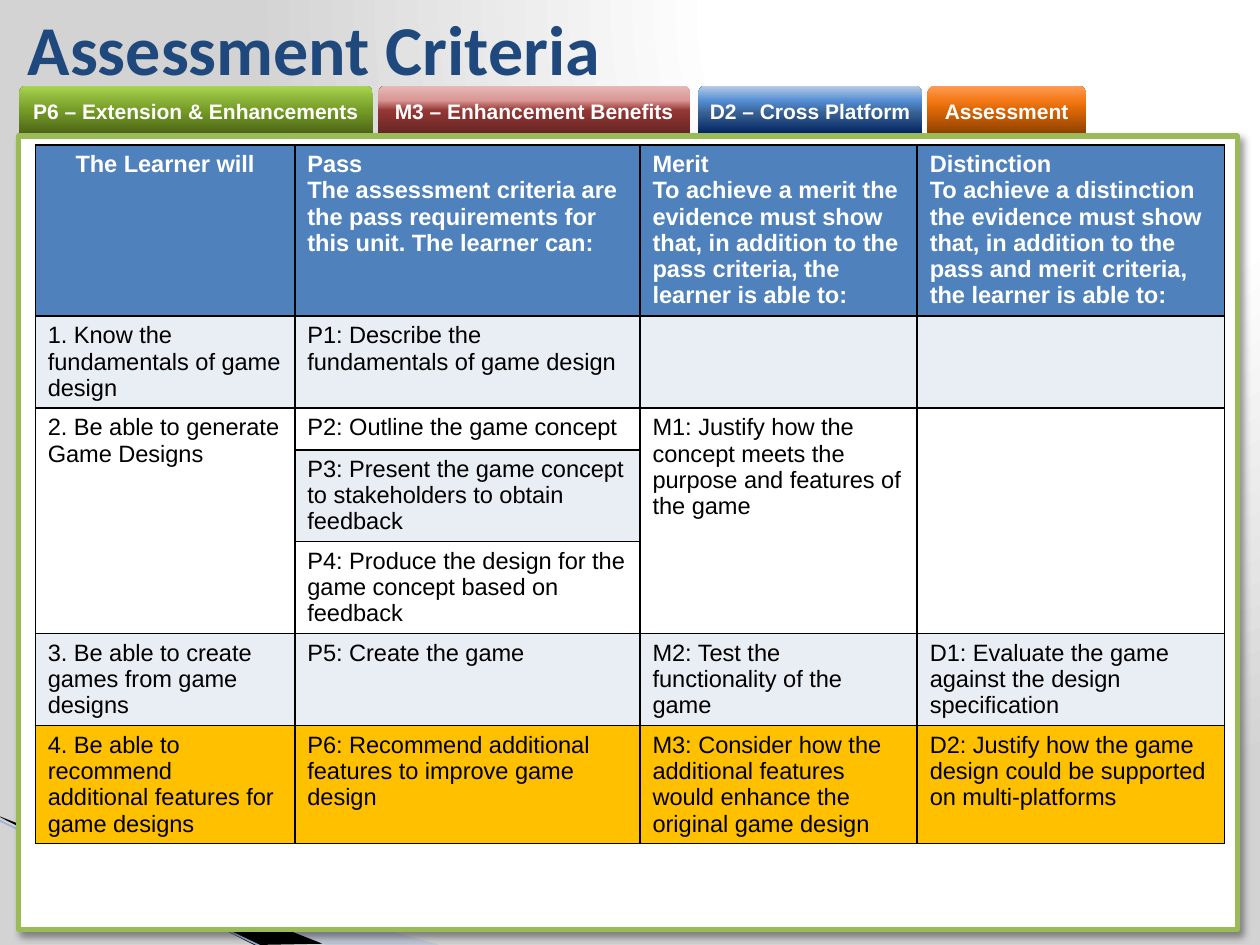
"""Build the assessment criteria slide."""
from lxml.etree import SubElement
from pptx import Presentation
from pptx.dml.color import RGBColor as RGB
from pptx.enum.shapes import MSO_CONNECTOR as Link, MSO_SHAPE as Kind
from pptx.enum.text import MSO_ANCHOR as Anchor, PP_ALIGN as Align
from pptx.oxml import parse_xml
from pptx.oxml.ns import nsdecls, qn
from pptx.util import Inches, Pt

HEX = {
    "white": "FFFFFF", "black": "000000", "navy": "1F497D", "blue": "4F81BD",
    "pale": "E9EDF4", "gold": "FFC000", "green": "9BBB59",
    "mist": "A7B9DB", "steel": "9EB3D6",
}
BACK = [(0, "FFFFFF"), (40, "FFFFFF"), (100, "D3D3D3")]
TABS = [
    ("P6 – Extension & Enhancements", 0.15, 2.81,
     [(0, "4A6316"), (50, "769C27"), (70, "89B137"), (100, "A9D651")]),
    ("M3 – Enhancement Benefits", 3, 2.48,
     [(0, "632523"), (50, "953735"), (70, "D99694"), (100, "E6B9B8")]),
    ("D2 – Cross Platform", 5.54, 1.78,
     [(0, "002060"), (44, "376092"), (70, "558ED5"), (100, "B9CDE5")]),
    ("Assessment", 7.36, 1.26,
     [(0, "8B3F00"), (50, "DA6606"), (70, "F47917"), (100, "FF9C54")]),
]
WEDGES = [
    ("mist", 40, [(-0.01, 6.5), (3.49, 7.5), (2.59, 7.5), (-0.01, 6.49)]),
    ("black", 100, [(0, 6.48), (2.56, 7.49), (2.02, 7.5), (0.01, 6.49)]),
]
COLS = [2.06, 2.74, 2.2, 2.44]
ROWS = [
    (1.36, "blue", [
        ["The Learner will"],
        ["Pass", "The assessment criteria are the pass requirements for this unit. "
         "The learner can:"],
        ["Merit", "To achieve a merit the evidence must show that, in addition to "
         "the pass criteria, the learner is able to:"],
        ["Distinction", "To achieve a distinction the evidence must show that, in "
         "addition to the pass and merit criteria, the learner is able to:"]]),
    (0.73, "pale", [
        ["1. Know the fundamentals of game design"],
        ["P1: Describe the fundamentals of game design"], [], []]),
    (0.33, "white", [
        ["2. Be able to generate Game Designs"],
        ["P2: Outline the game concept"],
        ["M1: Justify how the concept meets the purpose and features of the game"],
        []]),
    (0.73, "pale", [
        [], ["P3: Present the game concept to stakeholders to obtain feedback"],
        [], []]),
    (0.73, "white", [
        [], ["P4: Produce the design for the game concept based on feedback"],
        [], []]),
    (0.73, "pale", [
        ["3. Be able to create games from game designs"],
        ["P5: Create the game"],
        ["M2: Test the functionality of the game"],
        ["D1: Evaluate the game against the design specification"]]),
    (0.93, "gold", [
        ["4. Be able to recommend", "additional features for", "game designs"],
        ["P6: Recommend additional features to improve game design"],
        ["M3: Consider how the additional features would enhance the original "
         "game design"],
        ["D2: Justify how the game design could be supported on multi-platforms"]]),
]
MERGED = [(2, 4, col) for col in (0, 2, 3)]


def color(name):
    return RGB.from_string(HEX[name])


def box(*sizes):
    return [Inches(size) for size in sizes]


def shade(fill, root, stops, path=False):
    fill.gradient()
    grad = root.find(".//" + qn("a:gradFill"))
    grad.clear()
    items = SubElement(grad, qn("a:gsLst"))
    for pos, tint in stops:
        stop = SubElement(items, qn("a:gs"), pos=str(pos * 1000))
        SubElement(stop, qn("a:srgbClr"), val=tint)
    if path:
        way = SubElement(grad, qn("a:path"), path="circle")
        SubElement(way, qn("a:fillToRect"), l="65000", t="0", r="0", b="98000")
    else:
        SubElement(grad, qn("a:lin"), ang="16200000", scaled="0")


def write(frame, lines, font, size, tint, bold=False, align=Align.LEFT):
    for i, line in enumerate(lines):
        para = frame.add_paragraph() if i else frame.paragraphs[0]
        para.alignment = align
        run = para.add_run()
        run.text = line
        run.font.name, run.font.size, run.font.bold = font, Pt(size), bold
        run.font.color.rgb = color(tint)


def add_wedges(slide):
    for tint, alpha, points in WEDGES:
        start, *rest = [box(*point) for point in points]
        pen = slide.shapes.build_freeform(*start, scale=1.0)
        pen.add_line_segments(rest)
        shape = pen.convert_to_shape()
        shape.shadow.inherit = False
        shape.fill.solid()
        shape.fill.fore_color.rgb = color(tint)
        shape.line.fill.background()
        if alpha < 100:
            fill = shape._element.spPr.find(qn("a:solidFill"))
            SubElement(fill[0], qn("a:alpha"), val=str(alpha * 1000))
    edge = slide.shapes.add_connector(Link.STRAIGHT, *box(-0.01, 6.51, 2.09, 7.52))
    edge.line.color.rgb, edge.line.width = color("steel"), Pt(0.95)
    SubElement(edge._element.spPr, qn("a:effectLst"))


def add_tabs(slide):
    for label, left, width, stops in TABS:
        tab = slide.shapes.add_shape(Kind.ROUND_2_SAME_RECTANGLE,
                                     *box(left, 0.68, width, 0.39))
        tab.shadow.inherit = False
        shade(tab.fill, tab._element.spPr, stops)
        tab.line.fill.background()
        frame = tab.text_frame
        frame.margin_left = frame.margin_right = 0
        frame.margin_top = frame.margin_bottom = 0
        frame.vertical_anchor = Anchor.MIDDLE
        write(frame, [label], "Arial", 12, "white", True, Align.CENTER)


def add_panel(slide):
    panel = slide.shapes.add_shape(Kind.RECTANGLE, *box(0.15, 1.08, 9.67, 6.3))
    panel.fill.solid()
    panel.fill.fore_color.rgb = color("white")
    panel.line.color.rgb, panel.line.width = color("green"), Pt(3)
    panel.shadow.inherit = False
    glow = SubElement(panel._element.spPr.find(qn("a:effectLst")), qn("a:outerShdw"),
                      blurRad=str(Pt(4)), dist=str(Pt(3)), dir="2700000", algn="tl")
    tint = SubElement(glow, qn("a:srgbClr"), val=HEX["black"])
    SubElement(tint, qn("a:alpha"), val="40000")


def border(cell):
    props = cell._tc.get_or_add_tcPr()
    for i, side in enumerate("LRTB"):
        props.insert(i, parse_xml(
            f'<a:ln{side} {nsdecls("a")} w="{Pt(1)}"><a:solidFill>'
            f'<a:srgbClr val="{HEX["black"]}"/></a:solidFill></a:ln{side}>'))


def add_grid(slide):
    high = sum(row[0] for row in ROWS)
    grid = slide.shapes.add_table(len(ROWS), len(COLS),
                                  *box(0.28, 1.15, sum(COLS), high)).table
    for col, width in zip(grid.columns, COLS):
        col.width = Inches(width)
    for r, (height, back, texts) in enumerate(ROWS):
        grid.rows[r].height = Inches(height)
        for c, lines in enumerate(texts):
            cell = grid.cell(r, c)
            cell.fill.solid()
            cell.fill.fore_color.rgb = color(back)
            border(cell)
            write(cell.text_frame, lines, "Arial", 13.5,
                  "black" if r else "white", r == 0,
                  Align.LEFT if r or c else Align.CENTER)
    for top, end, col in MERGED:
        grid.cell(top, col).merge(grid.cell(end, col))


def add_title(slide):
    title = slide.shapes.title
    title.left, title.top, title.width, title.height = box(0.12, 0, 8.43, 0.76)
    title.text_frame.vertical_anchor = Anchor.MIDDLE
    write(title.text_frame, ["Assessment Criteria"], "Calibri", 40, "navy", True)


def main():
    deck = Presentation()
    deck.slide_width, deck.slide_height = box(10, 7.5)
    slide = deck.slides.add_slide(deck.slide_layouts[5])
    shade(slide.background.fill, slide._element, BACK, path=True)
    add_wedges(slide)
    add_tabs(slide)
    add_panel(slide)
    add_title(slide)
    add_grid(slide)
    deck.save("out.pptx")


if __name__ == "__main__":
    main()
